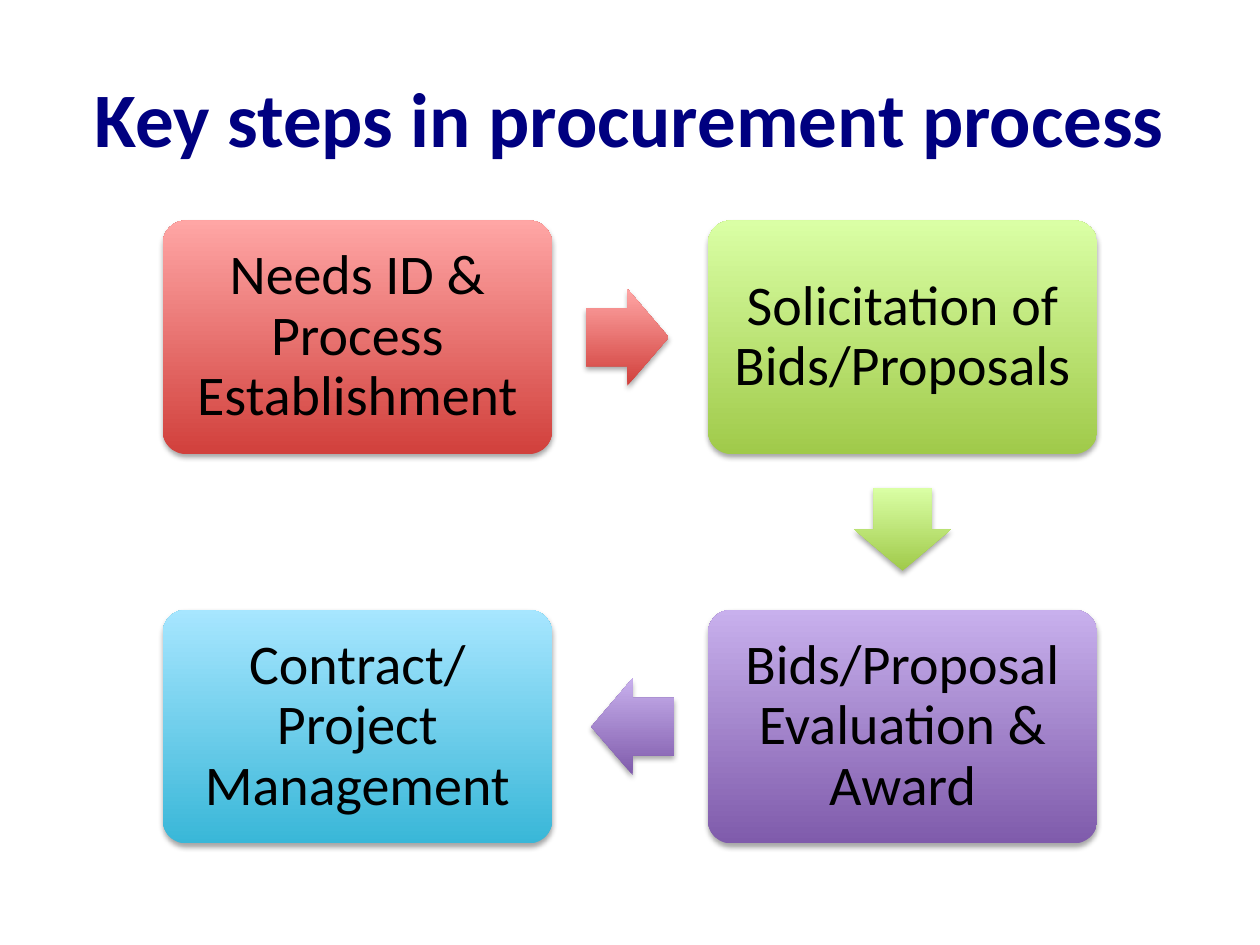
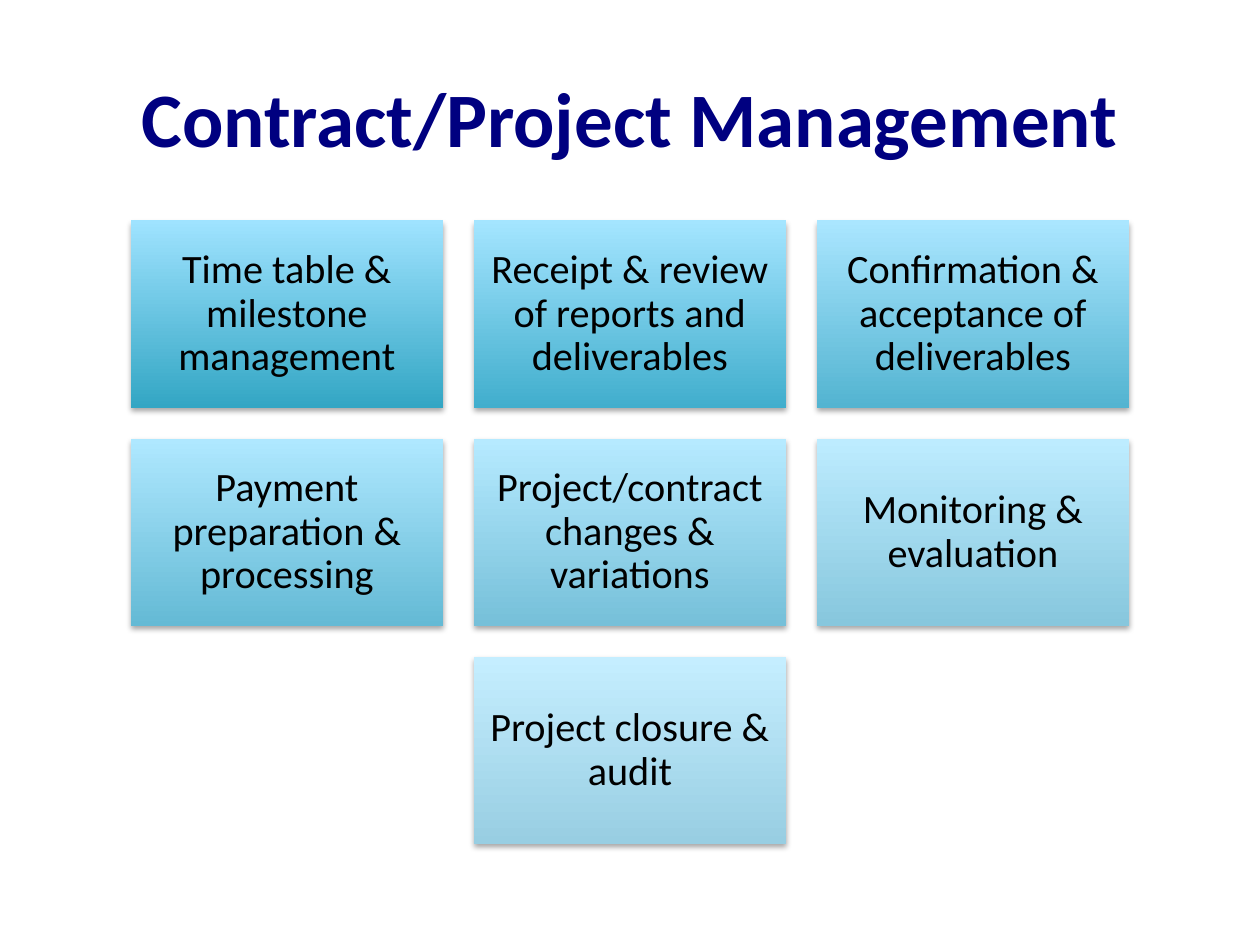
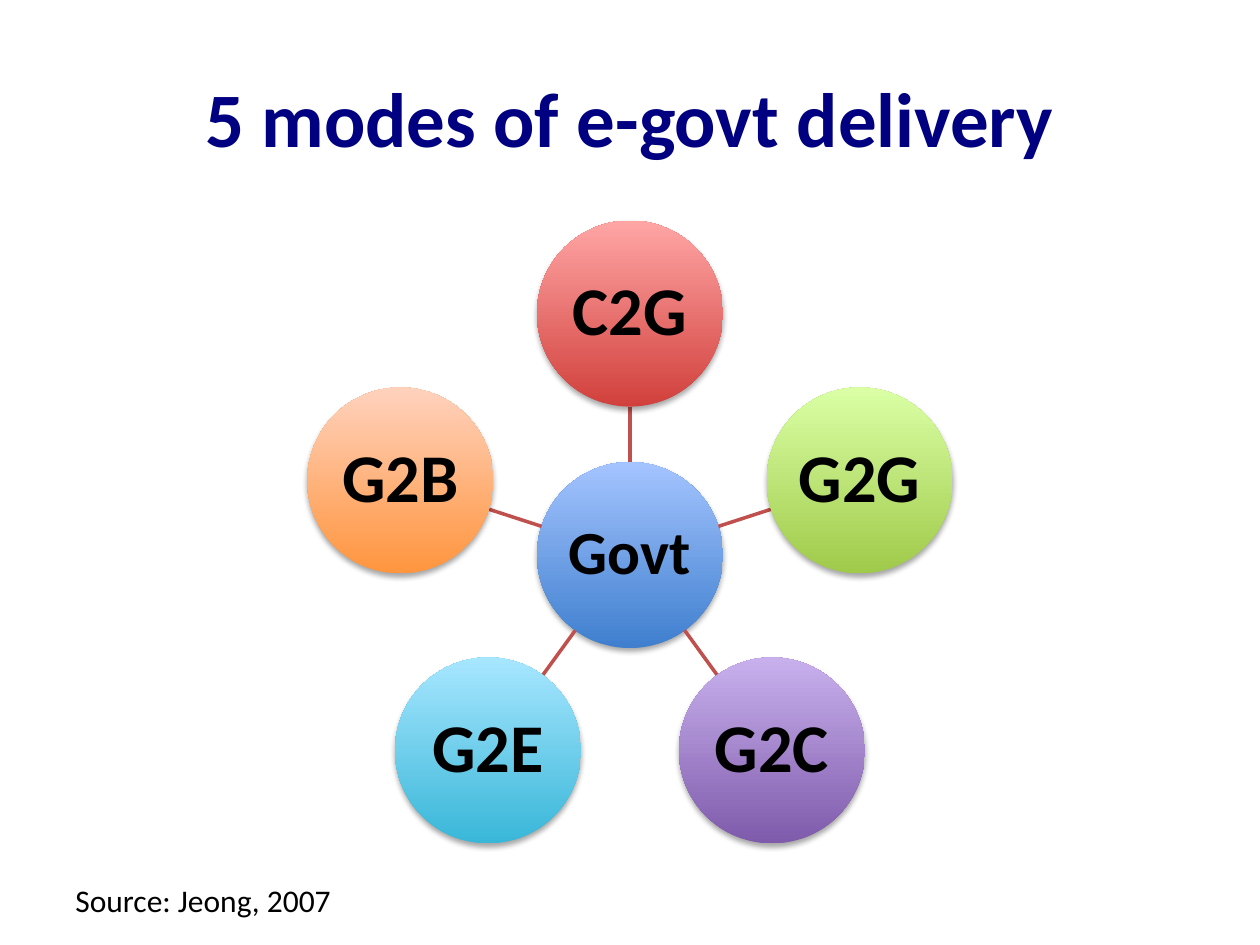
import math

from lxml import etree
from pptx import Presentation
from pptx.dml.color import RGBColor
from pptx.enum import shapes, text
from pptx.oxml.ns import qn
from pptx.util import Pt

FONT = "Calibri"
NAVY = RGBColor(0x00, 0x00, 0x80)
BLACK = RGBColor(0x00, 0x00, 0x00)
BRICK = RGBColor(0xC0, 0x50, 0x4D)

# Gradients as (bottom colour, top colour)
RED = (RGBColor(0xD1, 0x40, 0x3C), RGBColor(0xFF, 0xA6, 0xA5))
GREEN = (RGBColor(0xA0, 0xCA, 0x4A), RGBColor(0xDA, 0xFF, 0xA5))
PURPLE = (RGBColor(0x7F, 0x5B, 0xAB), RGBColor(0xC8, 0xB0, 0xED))
CYAN = (RGBColor(0x39, 0xB7, 0xD8), RGBColor(0xA7, 0xE6, 0xFF))
BLUE = (RGBColor(0x3F, 0x7F, 0xCE), RGBColor(0xA4, 0xC4, 0xFF))
ORANGE = (RGBColor(0xFF, 0x95, 0x3E), RGBColor(0xFF, 0xD2, 0xBD))
FADING_BLUES = [
    (RGBColor(0x33, 0xA6, 0xC4), RGBColor(0x9F, 0xE3, 0xFF)),
    (RGBColor(0x41, 0xAE, 0xCD), RGBColor(0xA4, 0xE5, 0xFF)),
    (RGBColor(0x53, 0xB4, 0xD1), RGBColor(0xAA, 0xE6, 0xFF)),
    (RGBColor(0x64, 0xBA, 0xD5), RGBColor(0xAF, 0xE8, 0xFF)),
    (RGBColor(0x76, 0xC0, 0xD9), RGBColor(0xB6, 0xEA, 0xFF)),
    (RGBColor(0x87, 0xC7, 0xDD), RGBColor(0xBD, 0xEC, 0xFF)),
    (RGBColor(0x98, 0xCE, 0xE2), RGBColor(0xC5, 0xEE, 0xFF)),
]

CENTER_X = 360
DIAGRAM_TOP = 126


class Deck:
    """Holds the shared style and the slide being built."""

    def __init__(self):
        self.presentation = Presentation()
        self.presentation.slide_width = Pt(720)
        self.presentation.slide_height = Pt(540)
        self.slide = None

    def new_slide(self, title):
        layout = self.presentation.slide_layouts.get_by_name("Title Only")
        self.slide = self.presentation.slides.add_slide(layout)
        shape = self.slide.shapes.title
        shape.left, shape.top, shape.width, shape.height = Pt(36), Pt(21.6), Pt(648), Pt(90)
        shape.text_frame.text = title
        shape.text_frame.vertical_anchor = text.MSO_ANCHOR.MIDDLE
        self.format(shape.text_frame, 44, NAVY, True, text.PP_ALIGN.CENTER)

    def format(self, text_frame, size, color=BLACK, bold=False, alignment=text.PP_ALIGN.LEFT):
        paragraph = text_frame.paragraphs[0]
        paragraph.alignment = alignment
        for run in paragraph.runs:
            run.font.name = FONT
            run.font.size = Pt(size)
            run.font.bold = bold
            run.font.color.rgb = color

    def block(self, kind, center, width, height, gradient):
        """Adds a borderless gradient shape with a soft shadow below it."""
        x, y = center
        shape = self.slide.shapes.add_shape(
            kind, Pt(x - width / 2), Pt(y - height / 2), Pt(width), Pt(height))
        shape.line.fill.background()
        shape.fill.gradient()
        shape.fill.gradient_angle = 90
        for stop, color, position in zip(shape.fill.gradient_stops, gradient, (0, 1)):
            stop.color.rgb = color
            stop.position = position
        properties = shape._element.spPr
        properties.find(qn("a:gradFill")).set("rotWithShape", "0")
        shape.shadow.inherit = False
        shadow = etree.SubElement(
            properties.find(qn("a:effectLst")), qn("a:outerShdw"),
            blurRad=str(Pt(3.15)), dist=str(Pt(1.81)), dir="5400000", rotWithShape="0")
        color = etree.SubElement(shadow, qn("a:srgbClr"), val=str(BLACK))
        etree.SubElement(color, qn("a:alpha"), val="35000")
        return shape

    def label(self, shape, words, size, inset, bold=False):
        frame = shape.text_frame
        frame.text = words
        frame.word_wrap = True
        frame.vertical_anchor = text.MSO_ANCHOR.MIDDLE
        frame.margin_left = frame.margin_right = Pt(inset)
        frame.margin_top = frame.margin_bottom = Pt(inset)
        frame.paragraphs[0].line_spacing = 0.9
        self.format(frame, size, bold=bold, alignment=text.PP_ALIGN.CENTER)

    def arrow(self, start, end, gradient):
        """Adds a block arrow just short of halfway between two centres."""
        angle = math.atan2(end[1] - start[1], end[0] - start[0])
        x = (start[0] + end[0]) / 2 - 1.5 * math.cos(angle)
        y = (start[1] + end[1]) / 2 - 1.5 * math.sin(angle)
        shape = self.block(shapes.MSO_SHAPE.RIGHT_ARROW, (x, y), 47.2, 55.2, gradient)
        shape.adjustments[0], shape.adjustments[1] = 0.6, 0.5
        shape.rotation = math.degrees(angle)

    def line(self, start, end):
        connector = self.slide.shapes.add_connector(
            shapes.MSO_CONNECTOR.STRAIGHT, *(Pt(value) for value in (*start, *end)))
        connector.line.color.rgb = BRICK
        connector.line.width = Pt(2)
        etree.SubElement(connector._element.spPr, qn("a:effectLst"))

    def note(self, words, left, top, width, height):
        box = self.slide.shapes.add_textbox(Pt(left), Pt(top), Pt(width), Pt(height))
        box.text_frame.text = words
        box.text_frame.word_wrap = True
        self.format(box.text_frame, 18)


def procurement_steps(deck):
    deck.new_slide("Key steps in procurement process")
    width, height = 222.5, 133.5
    left, right = CENTER_X - 0.7 * width, CENTER_X + 0.7 * width
    upper = DIAGRAM_TOP + height / 2
    lower = upper + width
    steps = [
        ("Needs ID & Process Establishment", (left, upper), RED),
        ("Solicitation of Bids/Proposals", (right, upper), GREEN),
        ("Bids/Proposal Evaluation & Award", (right, lower), PURPLE),
        ("Contract/ Project Management", (left, lower), CYAN),
    ]
    for index, (words, center, gradient) in enumerate(steps):
        box = deck.block(shapes.MSO_SHAPE.ROUNDED_RECTANGLE, center, width, height, gradient)
        box.adjustments[0] = 0.1
        deck.label(box, words, 32, 9.6)
        if index + 1 < len(steps):
            deck.arrow(center, steps[index + 1][1], gradient)


def management_tasks(deck):
    deck.new_slide("Contract/Project Management")
    width, height, gap = 178.2, 106.92, 17.82
    rows = [
        ["Time table & milestone management", "Receipt & review of reports and deliverables",
         "Confirmation & acceptance of deliverables"],
        ["Payment preparation & processing", "Project/contract changes & variations",
         "Monitoring & evaluation"],
        ["Project closure & audit"],
    ]
    gradients = iter(FADING_BLUES)
    for row, tasks in enumerate(rows):
        y = DIAGRAM_TOP + height / 2 + row * (height + gap)
        for column, words in enumerate(tasks):
            x = CENTER_X + (column - (len(tasks) - 1) / 2) * (width + gap)
            box = deck.block(shapes.MSO_SHAPE.RECTANGLE, (x, y), width, height, next(gradients))
            deck.label(box, words, 23, 7)


def delivery_modes(deck):
    deck.new_slide("5 modes of e-govt delivery")
    diameter, orbit, hub_y = 106.3, 138, 317.2

    def on_ring(index, radius):
        angle = math.radians(72 * index - 90)
        return CENTER_X + radius * math.cos(angle), hub_y + radius * math.sin(angle)

    def circle(words, center, gradient, size, inset):
        shape = deck.block(shapes.MSO_SHAPE.OVAL, center, diameter, diameter, gradient)
        deck.label(shape, words, size, inset, bold=True)

    circle("Govt", (CENTER_X, hub_y), BLUE, 35, 1.75)
    modes = [("C2G", RED), ("G2G", GREEN), ("G2C", PURPLE), ("G2E", CYAN), ("G2B", ORANGE)]
    for index, (words, gradient) in enumerate(modes):
        deck.line(on_ring(index, diameter / 2), on_ring(index, orbit - diameter / 2))
        circle(words, on_ring(index, orbit), gradient, 39, 1.95)
    deck.note("Source: Jeong, 2007", 36, 500, 212, 29)


def main():
    deck = Deck()
    procurement_steps(deck)
    management_tasks(deck)
    delivery_modes(deck)
    deck.presentation.save("out.pptx")


if __name__ == "__main__":
    main()
